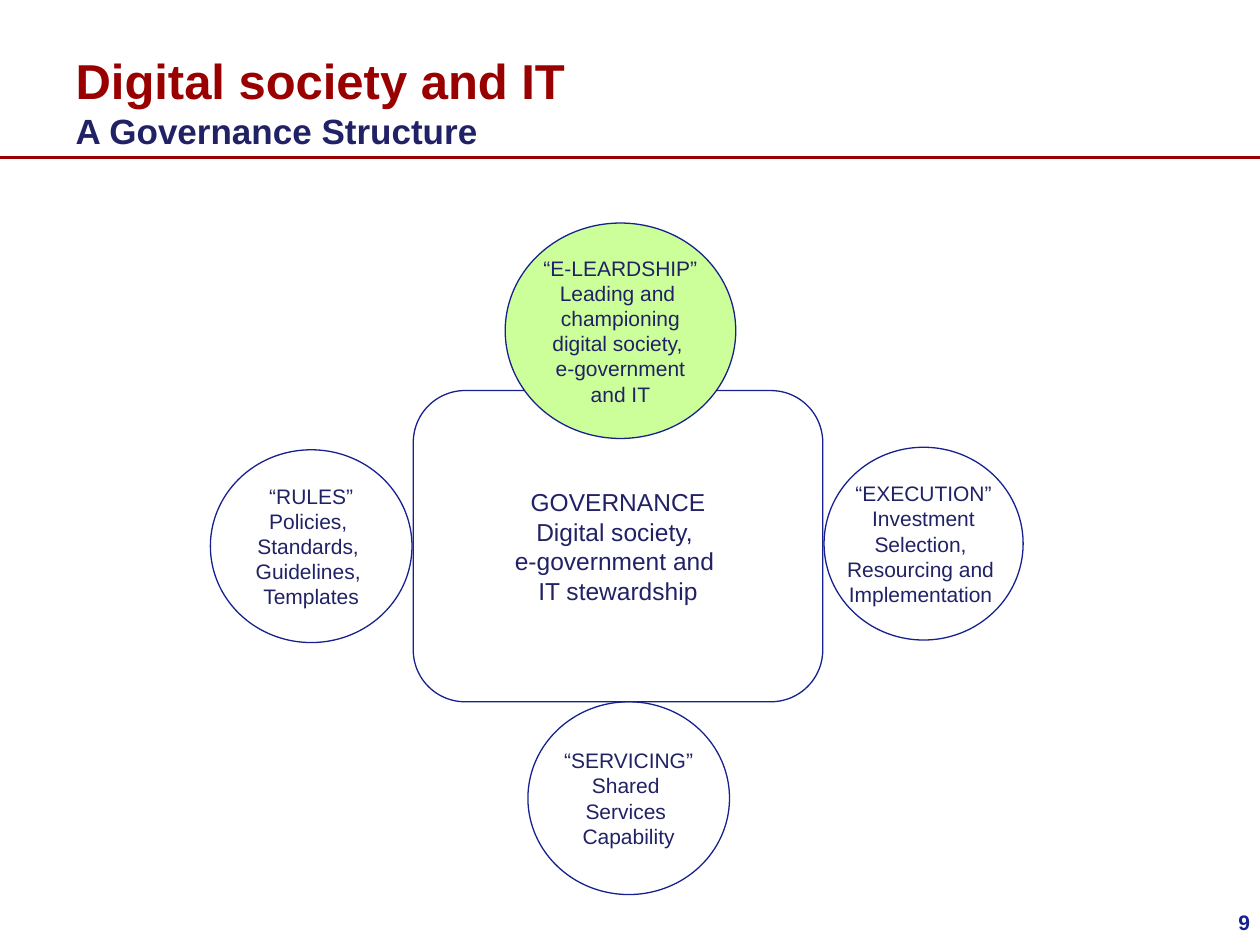
import copy

import lxml.etree
import pptx
import pptx.dml.color
import pptx.enum.shapes
import pptx.enum.text
import pptx.oxml.ns
import pptx.util

Inches = pptx.util.Inches
Pt = pptx.util.Pt
RGBColor = pptx.dml.color.RGBColor
Shape = pptx.enum.shapes.MSO_SHAPE
Align = pptx.enum.text.PP_ALIGN
Anchor = pptx.enum.text.MSO_ANCHOR
qn = pptx.oxml.ns.qn

RED = RGBColor(0x99, 0x00, 0x00)
NAVY = RGBColor(0x21, 0x21, 0x65)
BLUE = RGBColor(0x16, 0x21, 0x8E)
LIME = RGBColor(0xCC, 0xFF, 0x99)
WHITE = RGBColor(0xFF, 0xFF, 0xFF)

# Left, top, width, height, fill, paragraphs; \v breaks a line.
CIRCLES = [
    (4.19, 5.57, 1.6, 1.53, WHITE, "“SERVICING”\vShared \vServices \vCapability"),
    (6.54, 3.55, 1.58, 1.53, WHITE,
     "“EXECUTION”\vInvestment\nSelection, \vResourcing and \vImplementation "),
    (1.67, 3.57, 1.6, 1.53, WHITE,
     "“RULES”\vPolicies, \vStandards, \vGuidelines, \vTemplates"),
]
LEADER = (4.01, 1.77, 1.83, 1.71, LIME,
          "“E-LEARDSHIP”\vLeading and \vchampioning\vdigital society, \v"
          "e-government\vand IT")
CENTRE = (3.28, 3.1, 3.25, 2.47, None,
          "GOVERNANCE\vDigital society, \ve-government and \vIT stewardship")


class Deck:
    font = "Arial"

    def __init__(self):
        self.prs = pptx.Presentation()
        self.prs.slide_width = Inches(10)
        self.prs.slide_height = Inches(7.5)
        self.slide = self.prs.slides.add_slide(self.prs.slide_layouts[5])

    def style(self, run, size, color, bold=False):
        run.font.name = self.font
        run.font.size = Pt(size)
        run.font.bold = bold
        run.font.color.rgb = color

    def breaks(self, para):
        """Give line breaks the format of the paragraph's first run."""
        look = para.runs[0].font._element
        for br in para._p.findall(qn("a:br")):
            br.insert(0, copy.deepcopy(look))

    def title(self, head, sub):
        box = self.slide.shapes.title
        box.left, box.top = Inches(0.5), Inches(0.08)
        box.width, box.height = Inches(8.17), Inches(1.17)
        frame = box.text_frame
        frame.text = f"{head}\v{sub}"
        frame.auto_size = pptx.enum.text.MSO_AUTO_SIZE.NONE
        frame.vertical_anchor = Anchor.BOTTOM
        para = frame.paragraphs[0]
        para.alignment = Align.LEFT
        self.style(para.runs[0], 28, RED, True)
        self.style(para.runs[1], 20, NAVY, True)
        self.breaks(para)

    def rule(self, y):
        line = self.slide.shapes.add_connector(
            pptx.enum.shapes.MSO_CONNECTOR.STRAIGHT,
            Inches(0), Inches(y), Inches(10), Inches(y))
        line.line.color.rgb = RED
        line.line.width = Pt(2.25)
        lxml.etree.SubElement(line._element.spPr, qn("a:effectLst"))

    def number(self, text):
        box = self.slide.shapes.add_textbox(
            Inches(7.69), Inches(7.17), Inches(2.33), Inches(0.33))
        frame = box.text_frame
        frame.word_wrap = True
        frame.text = text
        para = frame.paragraphs[0]
        para.alignment = Align.RIGHT
        self.style(para.runs[0], 12, BLUE, True)

    def node(self, kind, left, top, width, height, fill, text, size=12):
        shape = self.slide.shapes.add_shape(
            kind, Inches(left), Inches(top), Inches(width), Inches(height))
        shape.shadow.inherit = False
        if fill is None:
            shape.fill.background()
        else:
            shape.fill.solid()
            shape.fill.fore_color.rgb = fill
        shape.line.color.rgb = BLUE
        shape.line.width = Pt(0.75)
        frame = shape.text_frame
        frame.word_wrap = False
        frame.vertical_anchor = Anchor.MIDDLE
        frame.text = text
        for para in frame.paragraphs:
            para.alignment = Align.CENTER
            for run in para.runs:
                self.style(run, size, NAVY)
            self.breaks(para)


def main():
    deck = Deck()
    deck.rule(1.25)
    deck.title("Digital society and IT", "A Governance Structure")
    deck.number("9")
    for circle in CIRCLES:
        deck.node(Shape.OVAL, *circle)
    deck.node(Shape.ROUNDED_RECTANGLE, *CENTRE, size=14)
    deck.node(Shape.OVAL, *LEADER)
    deck.prs.save("out.pptx")


if __name__ == "__main__":
    main()
